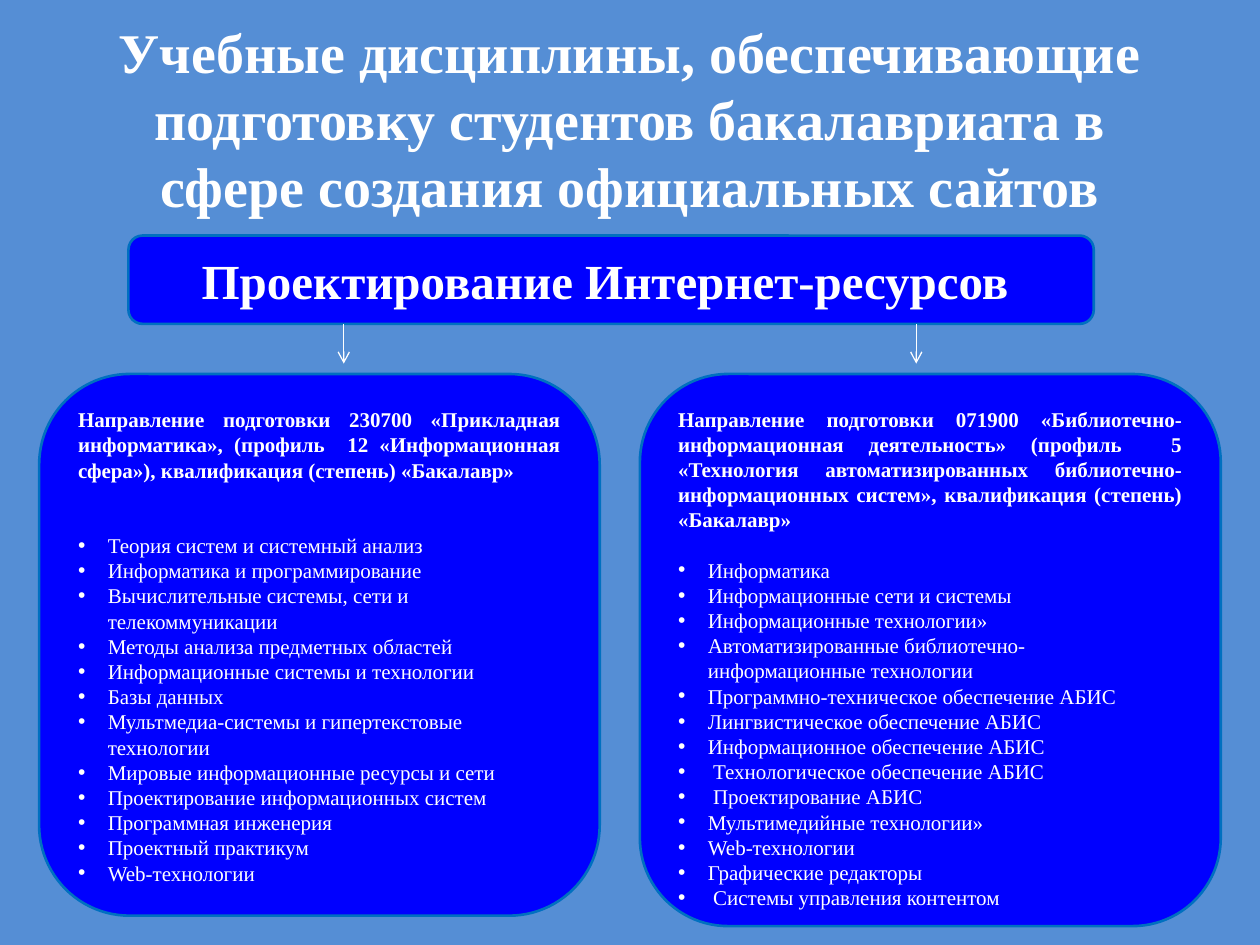
from collections import namedtuple
from dataclasses import dataclass

from lxml.etree import SubElement
from pptx import Presentation
from pptx.dml.color import RGBColor
from pptx.enum.shapes import MSO_CONNECTOR as Connector, MSO_SHAPE as Preset
from pptx.enum.text import MSO_ANCHOR as Anchor, PP_ALIGN as Align
from pptx.oxml.ns import qn
from pptx.util import Cm, Pt

Box = namedtuple("Box", "left top width height")


@dataclass(frozen=True)
class Theme:
    font: str = "Times New Roman"
    background: str = "558ED5"
    panel: str = "0000FF"
    border: str = "0070C0"
    text: str = "FFFFFF"
    title_size: int = 32
    banner_size: int = 28
    body_size: int = 12
    border_width: float = 1.5
    arrow_width: float = 0.75
    blank_line: float = 14.35


THEME = Theme()

TITLE = ("Учебные дисциплины, обеспечивающие подготовку студентов "
         "бакалавриата в сфере создания официальных сайтов")
BANNER = "Проектирование Интернет-ресурсов "

INFORMATICS = (
    "Направление подготовки 230700 «Прикладная информатика», (профиль  12 "
    "«Информационная сфера»), квалификация (степень) «Бакалавр»",
    [
        "Теория систем и системный анализ",
        "Информатика и программирование",
        "Вычислительные системы, сети и телекоммуникации",
        "Методы анализа предметных областей",
        "Информационные системы и технологии",
        "Базы данных",
        "Мультмедиа-системы и гипертекстовые технологии",
        "Мировые информационные ресурсы и сети",
        "Проектирование информационных систем",
        "Программная инженерия",
        "Проектный практикум",
        "Web-технологии",
    ],
)
LIBRARY = (
    "Направление подготовки 071900 «Библиотечно-информационная деятельность» "
    "(профиль  5 «Технология автоматизированных библиотечно-информационных "
    "систем», квалификация (степень) «Бакалавр»",
    [
        "Информатика",
        "Информационные сети и системы",
        "Информационные технологии»",
        "Автоматизированные библиотечно-информационные технологии",
        "Программно-техническое обеспечение АБИС",
        "Лингвистическое обеспечение АБИС",
        "Информационное обеспечение АБИС",
        " Технологическое обеспечение АБИС",
        " Проектирование АБИС",
        "Мультимедийные технологии»",
        "Web-технологии",
        "Графические редакторы",
        " Системы управления контентом",
    ],
)


def color(value):
    return RGBColor.from_string(value)


def in_cm(box):
    return [Cm(length) for length in box]


def write(paragraph, text, size, bold=False, align=Align.LEFT, after=0, bullet=False):
    paragraph.alignment = align
    paragraph.space_after = Pt(after)
    if bullet:
        properties = paragraph._p.get_or_add_pPr()
        properties.set("marL", str(Cm(0.6)))
        properties.set("indent", str(-Cm(0.6)))
        SubElement(properties, qn("a:buFont"), typeface="Arial")
        SubElement(properties, qn("a:buChar"), char="•")
    run = paragraph.add_run()
    run.text = text
    run.font.name = THEME.font
    run.font.size = Pt(size)
    run.font.bold = bold
    run.font.color.rgb = color(THEME.text)


def add_rounded(slide, box, radius, anchor):
    shape = slide.shapes.add_shape(Preset.ROUNDED_RECTANGLE, *in_cm(box))
    shape.adjustments[0] = radius
    shape.shadow.inherit = False
    shape.fill.solid()
    shape.fill.fore_color.rgb = color(THEME.panel)
    shape.line.color.rgb = color(THEME.border)
    shape.line.width = Pt(THEME.border_width)
    shape.text_frame.word_wrap = True
    shape.text_frame.vertical_anchor = anchor
    return shape.text_frame


def add_arrow_down(slide, x, top, length):
    arrow = slide.shapes.add_connector(
        Connector.STRAIGHT, Cm(x), Cm(top), Cm(x), Cm(top + length))
    arrow.line.color.rgb = color(THEME.text)
    arrow.line.width = Pt(THEME.arrow_width)
    SubElement(arrow.line._get_or_add_ln(), qn("a:tailEnd"), type="arrow")
    SubElement(arrow._element.spPr, qn("a:effectLst"))


def draw_title(slide, box):
    frame = slide.shapes.add_textbox(*in_cm(box)).text_frame
    frame.word_wrap = True
    frame.vertical_anchor = Anchor.MIDDLE
    write(frame.paragraphs[0], TITLE, THEME.title_size, bold=True, align=Align.CENTER)


def draw_banner(slide, box, arrow_offsets):
    frame = add_rounded(slide, box, 0.16, Anchor.MIDDLE)
    write(frame.paragraphs[0], BANNER, THEME.banner_size, bold=True, align=Align.CENTER)
    for offset in arrow_offsets:
        add_arrow_down(slide, box.left + offset, box.top + box.height, 0.8)


def draw_programme(slide, box, programme, radius, gap_lines):
    heading, courses = programme
    frame = add_rounded(slide, box, radius, Anchor.TOP)
    write(frame.paragraphs[0], heading, THEME.body_size, bold=True,
          align=Align.JUSTIFY, after=gap_lines * THEME.blank_line)
    for course in courses:
        write(frame.add_paragraph(), course, THEME.body_size, bullet=True)


def main():
    presentation = Presentation()
    presentation.slide_width = Cm(25.4)
    presentation.slide_height = Cm(19.05)
    slide = presentation.slides.add_slide(presentation.slide_layouts[6])
    slide.background.fill.solid()
    slide.background.fill.fore_color.rgb = color(THEME.background)

    draw_title(slide, Box(1.27, 0.79, 22.86, 3.18))
    draw_programme(slide, Box(0.79, 7.54, 11.3, 10.92), INFORMATICS, 0.167, gap_lines=2)
    draw_banner(slide, Box(2.59, 4.75, 19.46, 1.78), arrow_offsets=(4.34, 15.88))
    draw_programme(slide, Box(12.9, 7.54, 11.71, 11.13), LIBRARY, 0.16, gap_lines=1)

    presentation.save("out.pptx")


if __name__ == "__main__":
    main()
